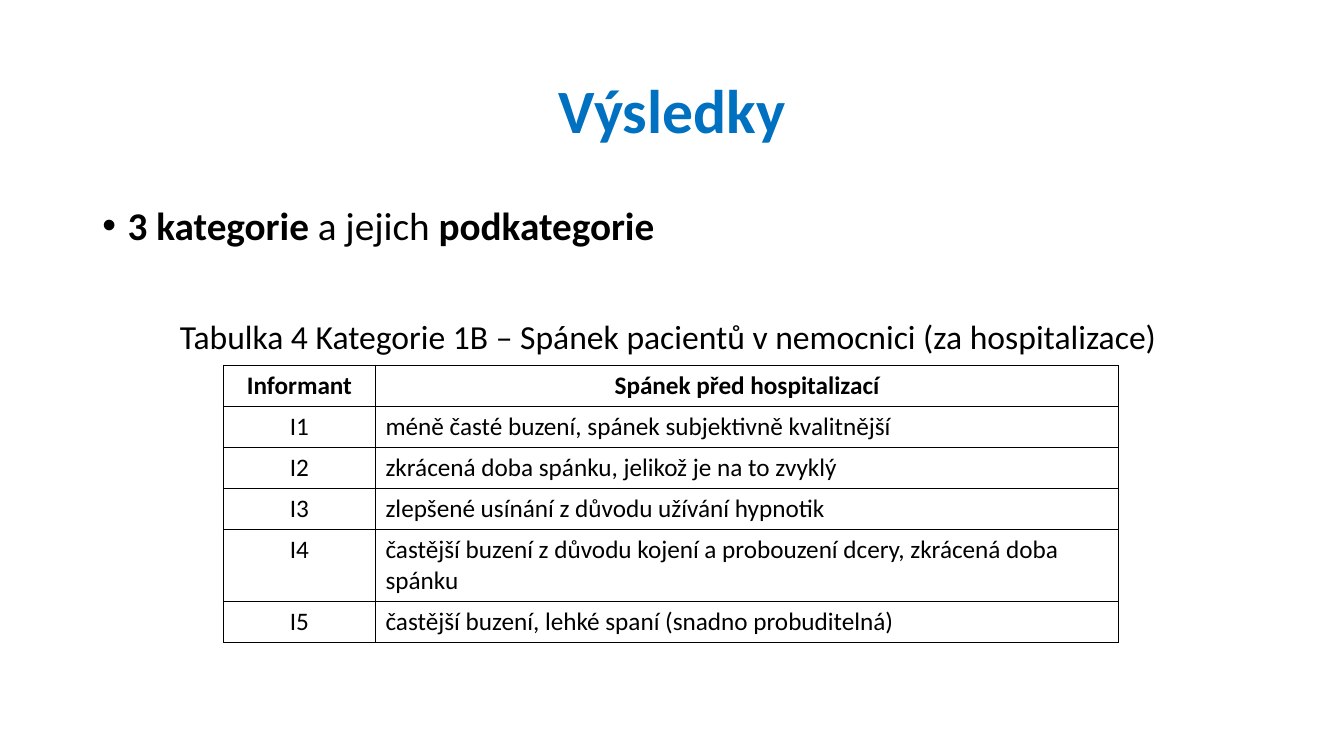
"""Build the results slide with a bullet, a caption and a table of informants."""
from lxml.etree import SubElement
from pptx import Presentation
from pptx.dml.color import RGBColor
from pptx.enum.text import MSO_ANCHOR, MSO_AUTO_SIZE, PP_ALIGN
from pptx.oxml.ns import qn
from pptx.util import Inches, Pt

ROWS = [
    ("Informant", "Spánek před hospitalizací"),
    ("I1", "méně časté buzení, spánek subjektivně kvalitnější"),
    ("I2", "zkrácená doba spánku, jelikož je na to zvyklý"),
    ("I3", "zlepšené usínání z důvodu užívání hypnotik"),
    ("I4", "častější buzení z důvodu kojení a probouzení dcery, zkrácená doba spánku"),
    ("I5", "častější buzení, lehké spaní (snadno probuditelná)"),
]


def color(hex_string):
    return RGBColor.from_string(hex_string)


def write(p, text, size=18, bold=False, fill="000000", align=PP_ALIGN.LEFT, spacing=None, before=0):
    p.alignment = align
    p.space_before = Pt(before)
    if spacing:
        p.line_spacing = spacing
    r = p.add_run()
    r.text = text
    r.font.name = "Calibri"
    r.font.size = Pt(size)
    r.font.bold = bold
    r.font.color.rgb = color(fill)


prs = Presentation()
prs.slide_width, prs.slide_height = Inches(13.33), Inches(7.5)
U = prs.slide_width / 160
s = prs.slides.add_slide(prs.slide_layouts[1])
title, body = s.placeholders

for sp, top, height in ((title, 4.8, 17.4), (body, 24, 57.1)):
    sp.left, sp.top = int(11 * U), int(top * U)
    sp.width, sp.height = int(138 * U), int(height * U)
    sp.text_frame.word_wrap = True
    sp.text_frame.auto_size = MSO_AUTO_SIZE.NONE

title.text_frame.vertical_anchor = MSO_ANCHOR.MIDDLE
write(title.text_frame.paragraphs[0], "Výsledky", size=44, bold=True, fill="0070C0",
      align=PP_ALIGN.CENTER, spacing=0.9)

tf = body.text_frame
p = tf.paragraphs[0]
pPr = p._p.get_or_add_pPr()
pPr.set("marL", str(Inches(0.25)))
pPr.set("indent", str(-Inches(0.25)))
SubElement(pPr, qn("a:buChar"), char="•")
for text, bold in (("3 kategorie ", True), ("a jejich ", False), ("podkategorie", True)):
    write(p, text, size=28, bold=bold, spacing=0.9)

p = tf.add_paragraph()
pPr = p._p.get_or_add_pPr()
pPr.set("marL", "0")
pPr.set("indent", "0")
SubElement(pPr, qn("a:buNone"))
write(p, "Tabulka 4 Kategorie 1B – Spánek pacientů v nemocnici (za hospitalizace) ",
      size=24, align=PP_ALIGN.CENTER, spacing=0.9, before=51)

widths = (18.1, 88.5)
heights = (4.9, 4.9, 4.9, 4.9, 8.5, 4.9)
table = s.shapes.add_table(len(ROWS), 2, int(26.6 * U), int(43.5 * U),
                           int(sum(widths) * U), int(sum(heights) * U)).table
table.first_row = table.horz_banding = False
for column, width in zip(table.columns, widths):
    column.width = int(width * U)

for i, (row, height) in enumerate(zip(ROWS, heights)):
    table.rows[i].height = int(height * U)
    for j, text in enumerate(row):
        cell = table.cell(i, j)
        header = i == 0
        cell.vertical_anchor = MSO_ANCHOR.MIDDLE if header else MSO_ANCHOR.TOP
        write(cell.text_frame.paragraphs[0], text, bold=header,
              align=PP_ALIGN.CENTER if header or j == 0 else PP_ALIGN.LEFT)
        tcPr = cell._tc.get_or_add_tcPr()
        for side in ("a:lnL", "a:lnR", "a:lnT", "a:lnB"):
            ln = SubElement(tcPr, qn(side), w=str(Pt(1)))
            SubElement(SubElement(ln, qn("a:solidFill")), qn("a:srgbClr"), val="000000")
        cell.fill.background()

prs.save("out.pptx")
